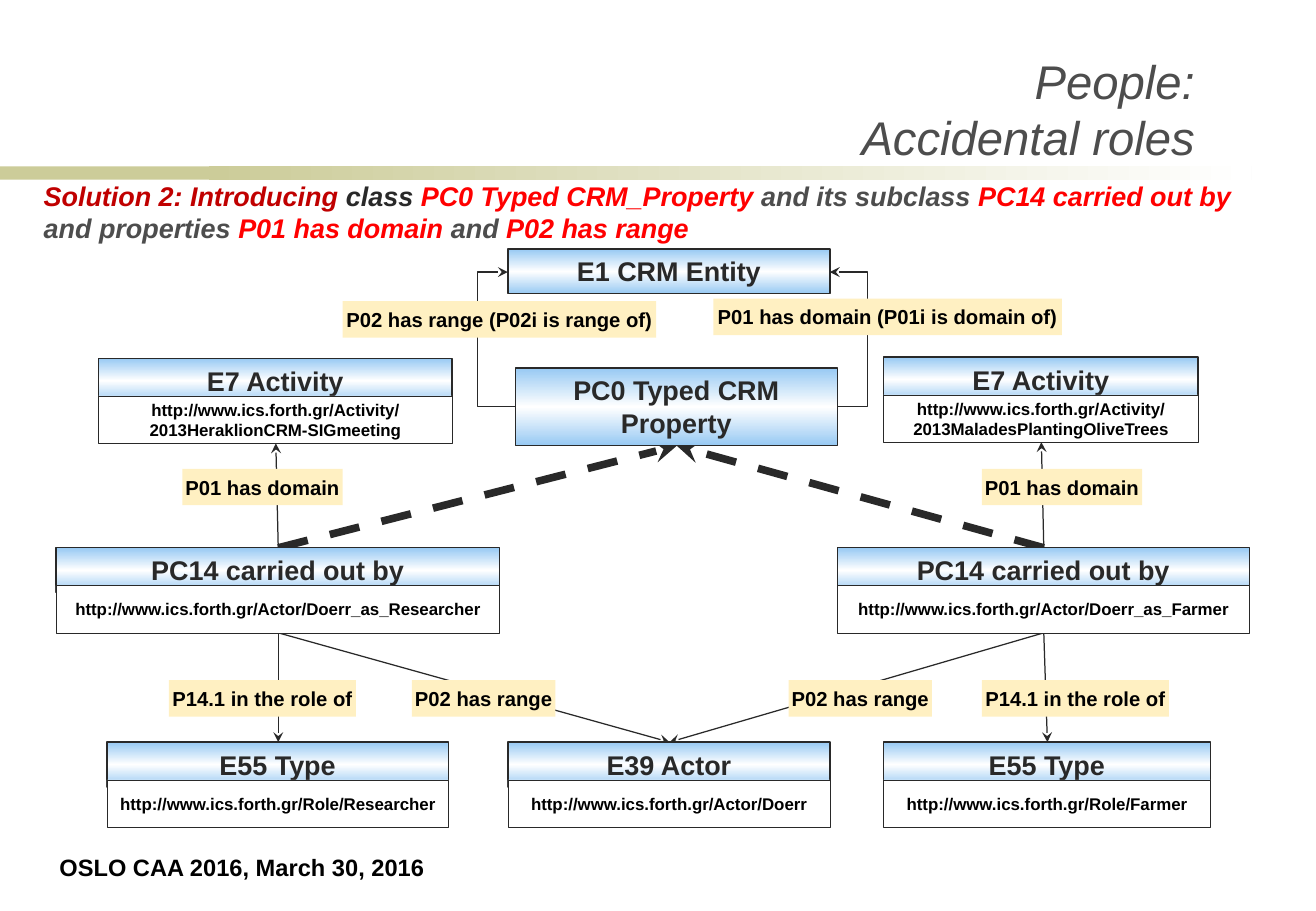
from lxml.etree import SubElement
from pptx import Presentation
from pptx.dml.color import RGBColor
from pptx.enum.dml import MSO_LINE
from pptx.enum.shapes import MSO_CONNECTOR as Link, MSO_SHAPE as Shape
from pptx.enum.text import MSO_ANCHOR as Anchor, MSO_AUTO_SIZE as Fit, PP_ALIGN as Align
from pptx.oxml.ns import qn
from pptx.util import Pt

PX = 9144  # 100 px to the inch
INK = {
    "band": "CCCC99", "white": "FFFFFF", "blue": "97C9F3", "cream": "FFF0C2",
    "dark": "292929", "gray": "4D4D4D", "black": "000000",
    "red": "FF0000", "wine": "C00000",
}


def rgb(name):
    return RGBColor.from_string(INK[name])


def write(shape, runs, size=16, bold=True, italic=False, align=Align.CENTER,
          anchor=Anchor.TOP, pad=(10, 5), wrap=True):
    """Fill a shape with one paragraph of (text, colour) runs."""
    frame = shape.text_frame
    frame.auto_size = Fit.NONE
    frame.word_wrap = wrap
    frame.vertical_anchor = anchor
    frame.margin_left = frame.margin_right = pad[0] * PX
    frame.margin_top = frame.margin_bottom = pad[1] * PX
    para = frame.paragraphs[0]
    para.alignment = align
    for text, color in runs:
        for i, line in enumerate(text.split("\n")):
            if i:
                para.add_line_break()
            run = para.add_run()
            run.text = line
            font = run.font
            font.name, font.size = "Arial", Pt(size)
            font.bold, font.italic = bold, italic
            font.color.rgb = rgb(color)


class Board:
    def __init__(self, deck):
        self.slide = deck.slides.add_slide(deck.slide_layouts[5])
        self.shapes = self.slide.shapes

    def title(self, x, y, w, h, runs):
        head = self.shapes.title
        head.left, head.top, head.width, head.height = (v * PX for v in (x, y, w, h))
        write(head, runs, italic=True, align=Align.LEFT, anchor=Anchor.BOTTOM)

    def note(self, x, y, w, h, text, color, **style):
        box = self.shapes.add_textbox(x * PX, y * PX, w * PX, h * PX)
        write(box, [(text, color)], **style)

    def rect(self, x, y, w, h, *fills, angle=90, line=None):
        """Draw a rectangle; several fills make an even gradient."""
        box = self.shapes.add_shape(Shape.RECTANGLE, x * PX, y * PX, w * PX, h * PX)
        box.shadow.inherit = False
        if len(fills) == 1:
            box.fill.solid()
            box.fill.fore_color.rgb = rgb(fills[0])
        else:
            box.fill.gradient()
            box.fill.gradient_angle = angle
            stops = box.element.spPr.find(qn("a:gradFill")).find(qn("a:gsLst"))
            stops.clear()
            for i, name in enumerate(fills):
                stop = SubElement(stops, qn("a:gs"), pos=str(i * 100000 // (len(fills) - 1)))
                SubElement(stop, qn("a:srgbClr"), val=INK[name])
        if line:
            box.line.color.rgb = rgb("dark")
            box.line.width = Pt(line)
        else:
            box.line.fill.background()
        return box

    def head(self, x, y, w, text, h=37):
        box = self.rect(x, y, w, h, "blue", "white", "blue", line=0.75)
        write(box, [(text, "dark")], pad=(6, 5))

    def node(self, x, y, w, text, link):
        """Draw a class header with its instance address below."""
        self.head(x, y, w, text)
        box = self.rect(x, y + 31, w, 39, "white", line=0.25)
        write(box, [(link, "black")], size=10, anchor=Anchor.MIDDLE)

    def label(self, x, y, w, text):
        box = self.rect(x, y, w, 30, "cream")
        write(box, [(text, "black")], size=12, pad=(2, 5), wrap=False)

    def arrow(self, x1, y1, x2, y2, width=0.75, dash=False, via=None):
        """Draw an arrow; via is the x of the middle leg of an elbow."""
        kind = Link.STRAIGHT if via is None else Link.ELBOW
        link = self.shapes.add_connector(kind, x1 * PX, y1 * PX, x2 * PX, y2 * PX)
        link.line.color.rgb = rgb("dark")
        link.line.width = Pt(width)
        if dash:
            link.line.dash_style = MSO_LINE.DASH
        props = link.element.spPr
        SubElement(props.find(qn("a:ln")), qn("a:tailEnd"), type="stealth")
        SubElement(props, qn("a:effectLst"))
        if via is not None:
            bend = round((via - x1) / (x2 - x1) * 100000)
            guides = props.find(qn("a:prstGeom")).find(qn("a:avLst"))
            SubElement(guides, qn("a:gd"), name="adj1", fmla=f"val {bend}")


def main():
    deck = Presentation()
    deck.slide_width, deck.slide_height = 1083 * PX, 750 * PX
    board = Board(deck)

    board.rect(0, 137, 253, 11, "band")
    board.rect(172, 137, 858, 11, "band", "white", angle=0)
    board.note(39, 697, 322, 34, "OSLO CAA 2016, March 30, 2016", "black",
               size=14, align=Align.LEFT, wrap=False)
    board.note(211, 13, 782, 128, "People:\nAccidental roles", "gray", size=28,
               bold=False, italic=True, align=Align.RIGHT, anchor=Anchor.BOTTOM)
    board.title(26, 143, 1002, 63, [
        ("Solution 2: Introducing ", "wine"), ("class ", "dark"),
        ("PC0 Typed CRM_Property ", "red"), ("and its subclass ", "gray"),
        ("PC14 carried out by ", "red"), ("and properties ", "gray"),
        ("P01 has domain ", "red"), ("and", "gray"), (" P02 has range", "red"),
    ])

    for mid, act, act_y, role in ((859, 857, 364, 862), (229, 227, 365, 229)):
        board.arrow(mid, 451, 557, 367, width=4.5, dash=True)
        board.arrow(mid, 451, act, act_y)
        board.arrow(mid, 521, role, 611)
        board.arrow(mid, 521, 551, 611)
    for start, end, via in ((689, 683, 714), (424, 418, 393)):
        board.arrow(start, 335, end, 224, via=via)

    site = "http://www.ics.forth.gr/"
    for x, y, w, text, link in (
        (46, 451, 365, "PC14 carried out by", "Actor/Doerr_as_Researcher"),
        (689, 451, 339, "PC14 carried out by", "Actor/Doerr_as_Farmer"),
        (81, 295, 291, "E7 Activity", "Activity/2013HeraklionCRM-SIGmeeting"),
        (727, 294, 259, "E7 Activity", "Activity/2013MaladesPlantingOliveTrees"),
        (88, 611, 281, "E55 Type", "Role/Researcher"),
        (418, 611, 265, "E39 Actor", "Actor/Doerr"),
        (727, 611, 269, "E55 Type", "Role/Farmer"),
    ):
        board.node(x, y, w, text, site + link)
    board.head(424, 303, 265, "PC0 Typed CRM Property", h=64)
    board.head(418, 205, 265, "E1 CRM Entity")

    for x, y, w, text in (
        (150, 386, 132, "P01 has domain"),
        (808, 386, 132, "P01 has domain"),
        (139, 560, 154, "P14.1 in the role of"),
        (808, 560, 154, "P14.1 in the role of"),
        (339, 560, 118, "P02 has range"),
        (649, 560, 118, "P02 has range"),
        (587, 246, 287, "P01 has domain (P01i is domain of)"),
        (282, 248, 258, "P02 has range (P02i is range of)"),
    ):
        board.label(x, y, w, text)

    deck.save("out.pptx")


if __name__ == "__main__":
    main()
